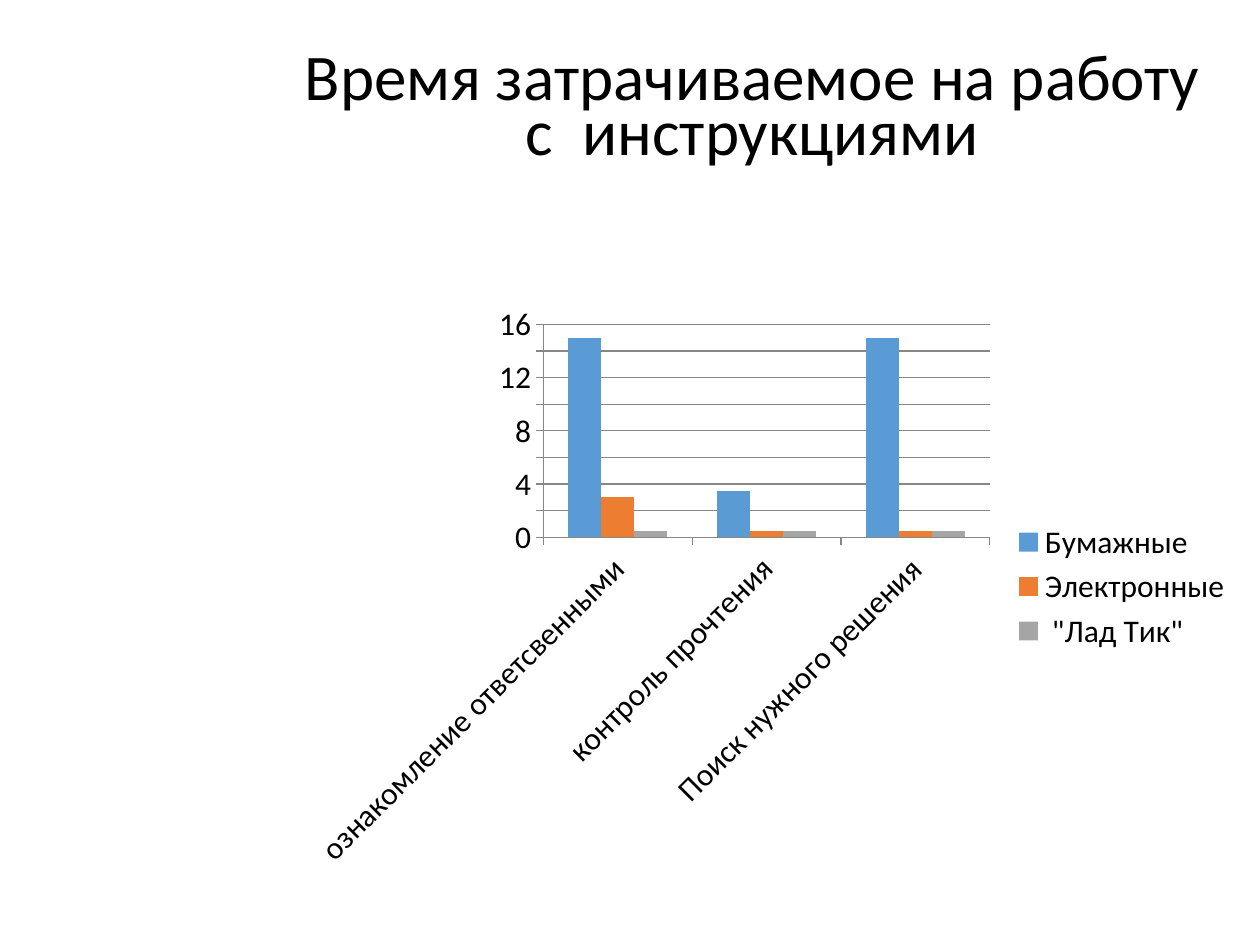
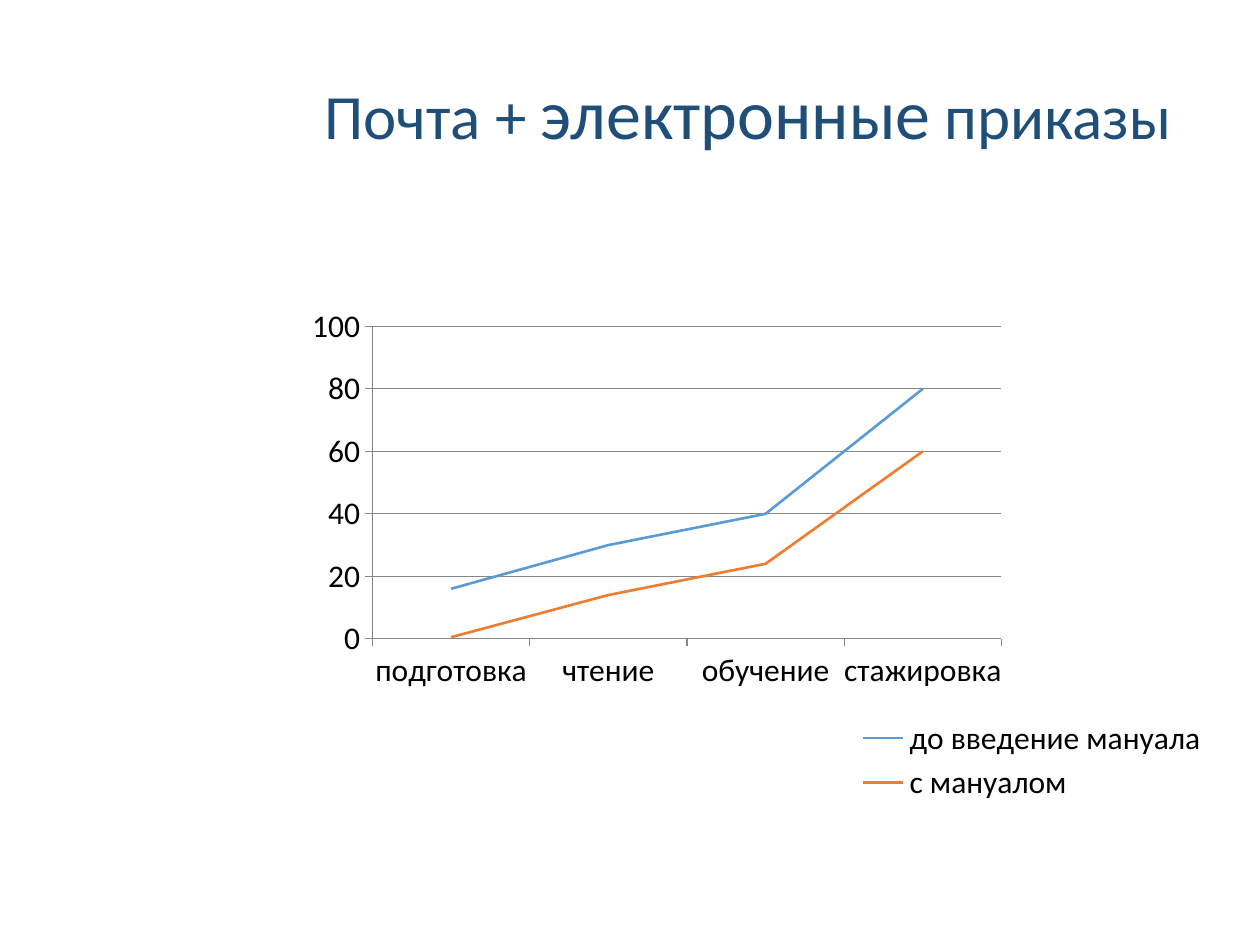
"""Builds two slides comparing the time spent on paper and electronic instructions."""
from lxml.etree import SubElement
from pptx import Presentation
from pptx.chart.data import CategoryChartData
from pptx.dml.color import RGBColor
from pptx.enum.chart import XL_CHART_TYPE as ChartType
from pptx.enum.chart import XL_LEGEND_POSITION as LegendPosition
from pptx.enum.chart import XL_TICK_MARK as TickMark
from pptx.enum.text import MSO_ANCHOR as Anchor
from pptx.enum.text import MSO_AUTO_SIZE as AutoSize
from pptx.enum.text import PP_ALIGN as Align
from pptx.oxml.ns import qn
from pptx.util import Cm, Pt

BLACK = RGBColor(0x00, 0x00, 0x00)
NAVY = RGBColor(0x1F, 0x4E, 0x79)
GRID_GRAY = RGBColor(0x87, 0x87, 0x87)
SERIES_COLORS = (
    RGBColor(0x5B, 0x9B, 0xD5),
    RGBColor(0xED, 0x7D, 0x31),
    RGBColor(0xA5, 0xA5, 0xA5),
)
FONT_NAME = "Calibri"
TITLE_ONLY = 5
CHART_FONT = {"name": FONT_NAME, "size": Pt(18), "bold": False}
TITLE_FRAME = {
    "auto_size": AutoSize.NONE,
    "vertical_anchor": Anchor.MIDDLE,
    "word_wrap": True,
}


def set_attributes(target, values):
    """Set every attribute named in a dict of format values."""
    for name, value in values.items():
        setattr(target, name, value)


def place(shape, box):
    """Move and size a shape to a box given in centimetres."""
    names = ("left", "top", "width", "height")
    set_attributes(shape, {name: Cm(length) for name, length in zip(names, box)})


def add_title(slide, box, runs, color, paragraph_format):
    """Fill the title placeholder with runs of (text, size)."""
    title = slide.shapes.title
    place(title, box)
    set_attributes(title.text_frame, TITLE_FRAME)
    paragraph = title.text_frame.paragraphs[0]
    set_attributes(paragraph, paragraph_format)
    for text, size in runs:
        run = paragraph.add_run()
        run.text = text
        set_attributes(run.font, {"name": FONT_NAME, "size": Pt(size)})
        run.font.color.rgb = color


def add_layout(element, part_box, chart_box, target=None):
    """Fix a plot area or legend at a box in centimetres inside its chart."""
    for old_layout in element.findall(qn("c:layout")):
        element.remove(old_layout)
    layout = element.makeelement(qn("c:layout"))
    legend_place = element.find(qn("c:legendPos"))
    element.insert(0 if legend_place is None else 1, layout)
    manual = SubElement(layout, qn("c:manualLayout"))
    settings = [("layoutTarget", target)] if target else []
    settings += [("xMode", "edge"), ("yMode", "edge")]
    chart_size = chart_box[2:] * 2
    settings += [
        (name, length / whole)
        for name, length, whole in zip("xywh", part_box, chart_size)
    ]
    for name, value in settings:
        SubElement(manual, qn(f"c:{name}")).set("val", str(value))


def style_axes(chart, maximum, step):
    """Draw thin gray axes and gridlines with outside ticks."""
    value_axis, category_axis = chart.value_axis, chart.category_axis
    set_attributes(value_axis, {
        "minimum_scale": 0,
        "maximum_scale": maximum,
        "major_unit": step,
        "has_major_gridlines": True,
    })
    for axis in (value_axis, category_axis):
        axis.major_tick_mark = TickMark.OUTSIDE
        set_attributes(axis.tick_labels.font, CHART_FONT)
        axis.tick_labels.font.color.rgb = BLACK
    for part in (value_axis, category_axis, value_axis.major_gridlines):
        part.format.line.width = Pt(0.7)
        part.format.line.color.rgb = GRID_GRAY


def add_chart(slide, kind, box, categories, series, maximum, step):
    """Add a chart with the shared font, axes, legend and series colours."""
    data = CategoryChartData()
    data.categories = categories
    for name, values in series.items():
        data.add_series(name, values)
    chart = slide.shapes.add_chart(kind, *map(Cm, box), data).chart
    set_attributes(chart, {"has_title": False, "has_legend": True})
    set_attributes(chart.font, CHART_FONT)
    chart.font.color.rgb = BLACK
    set_attributes(chart.legend, {
        "position": LegendPosition.RIGHT,
        "include_in_layout": False,
    })
    plot = chart.plots[0]
    plot.vary_by_categories = False
    for item, color in zip(plot.series, SERIES_COLORS):
        if kind == ChartType.LINE:
            item.smooth = False
            item.format.line.width = Pt(1.5)
            item.format.line.color.rgb = color
        else:
            item.format.fill.solid()
            item.format.fill.fore_color.rgb = color
    style_axes(chart, maximum, step)
    return chart


def add_time_slide(presentation):
    """Add the column chart of time spent on instructions."""
    slide = presentation.slides.add_slide(presentation.slide_layouts[TITLE_ONLY])
    add_title(
        slide, (5.72, 1, 18.9, 2.49),
        [("Время затрачиваемое на работу с  инструкциями", 37.2)],
        BLACK, {"alignment": Align.CENTER, "line_spacing": 0.7},
    )
    chart = add_chart(
        slide, ChartType.COLUMN_CLUSTERED, (5.92, 5.92, 19.18, 11.81),
        ("ознакомление ответсвенными", "контроль прочтения", "Поиск нужного решения"),
        {
            "Бумажные": (15, 3.5, 15),
            "Электронные": (3, 0.5, 0.5),
            ' "Лад Тик"': (0.5, 0.5, 0.5),
        },
        16, 2,
    )
    set_attributes(chart.plots[0], {"gap_width": 150, "overlap": 0})
    label_body = chart.category_axis._element.find(f".//{qn('a:bodyPr')}")
    label_body.set("rot", "-2700000")


def add_orders_slide(presentation):
    """Add the line chart of mail and electronic orders."""
    slide = presentation.slides.add_slide(presentation.slide_layouts[TITLE_ONLY])
    add_title(
        slide, (6.29, 1.27, 18.29, 1.96),
        [("Почта + ", 36), ("электронные", 40), (" приказы", 36)],
        NAVY, {"alignment": Align.LEFT},
    )
    chart_box = (2.62, 5.75, 22.45, 10.77)
    chart = add_chart(
        slide, ChartType.LINE, chart_box,
        ("подготовка", "чтение", "обучение", "стажировка"),
        {
            "до введение мануала": (16, 30, 40, 80),
            "с мануалом": (0.5, 14, 24, 60),
        },
        100, 20,
    )
    plot_area = chart.element.find(f".//{qn('c:plotArea')}")
    add_layout(plot_area, (4.89, 0.83, 12.68, 6.3), chart_box, "inner")
    add_layout(chart.legend._element, (14.59, 8.61, 7.18, 1.94), chart_box)


def main():
    """Build and save the presentation."""
    presentation = Presentation()
    set_attributes(presentation, {"slide_width": Cm(25.4), "slide_height": Cm(19.05)})
    add_time_slide(presentation)
    add_orders_slide(presentation)
    presentation.save("out.pptx")


if __name__ == "__main__":
    main()
